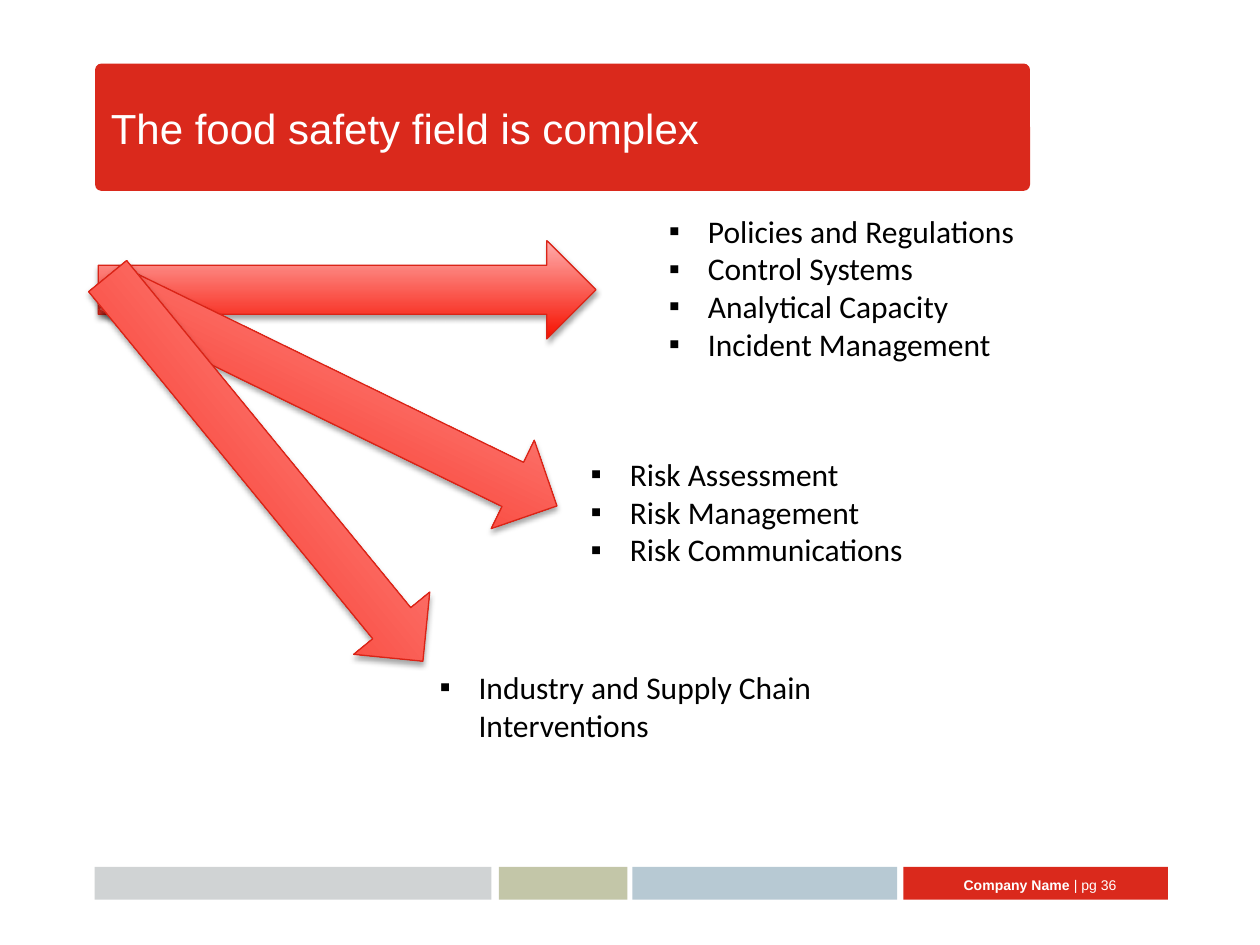
from pptx import Presentation
from pptx.dml.color import RGBColor
from pptx.enum.shapes import MSO_SHAPE
from pptx.enum.text import MSO_ANCHOR, MSO_AUTO_SIZE, PP_ALIGN
from pptx.oxml import parse_xml
from pptx.oxml.ns import nsdecls
from pptx.util import Inches, Pt

RED = "DA291C"
WHITE = "FFFFFF"
ARROW_LINE = "DA2417"
ARROW_STOPS = ("F61100", "FFADAC")
ARROW_SIZE = (3.95, 0.78)
FOOTER_BARS = [(0, 3.15, "D0D3D4"), (3.21, 1.02, "C3C6A8"),
               (4.27, 2.1, "B7C9D3"), (6.42, 2.1, RED)]
BRANCHES = [
    ((0.78, 1.91), 0, (5.21, 1.63, 3.92, 1.31),
     ["Policies and Regulations", "Control Systems",
      "Analytical Capacity", "Incident Management"]),
    ((0.67, 2.76), 26, (4.59, 3.56, 2.8, 1.01),
     ["Risk Assessment", "Risk Management", "Risk Communications"]),
    ((0.13, 3.33), 50.7, (3.39, 5.25, 3.92, 0.71),
     ["Industry and Supply Chain Interventions"]),
]


def colour(value):
    return RGBColor.from_string(value)


def inches(box):
    return [Inches(length) for length in box]


def style_font(font, name, size, value, bold=False):
    font.name = name
    font.size = Pt(size)
    font.bold = bold
    font.color.rgb = colour(value)


def add_bar(page, box, value, rounding=0):
    bar = page.shapes.add_shape(MSO_SHAPE.ROUNDED_RECTANGLE, *inches(box))
    bar.adjustments[0] = rounding
    bar.shadow.inherit = False
    bar.fill.solid()
    bar.fill.fore_color.rgb = colour(value)
    bar.line.fill.background()
    return bar


def add_title(page, box, text):
    left, top, width, height = box
    bar = add_bar(page, box, RED, 0.045)
    bar.line.color.rgb = colour(RED)
    bar.line.width = Pt(0.75)
    title = page.shapes.title
    title._element.addprevious(bar._element)
    title.left, title.top, title.width, title.height = inches(
        (left + 0.02, top, width - 0.03, height + 0.01))
    frame = title.text_frame
    frame.text = text
    frame.vertical_anchor = MSO_ANCHOR.MIDDLE
    para = frame.paragraphs[0]
    para.alignment = PP_ALIGN.LEFT
    style_font(para.runs[0].font, "Arial", 24, WHITE)


def add_footer(page, box):
    left, top, width, height = box
    for offset, bar_width, value in FOOTER_BARS:
        add_bar(page, (left + offset, top, bar_width, height), value)
    label = page.shapes.add_textbox(
        *inches((left + 5.88, top - 0.06, 2.33, height + 0.14)))
    frame = label.text_frame
    frame.word_wrap = True
    frame.vertical_anchor = MSO_ANCHOR.MIDDLE
    para = frame.paragraphs[0]
    para.alignment = PP_ALIGN.RIGHT
    for text, bold in (("Company Name ", True), ("| pg 36", False)):
        span = para.add_run()
        span.text = text
        style_font(span.font, "Arial", 8, WHITE, bold)


def add_arrow(page, box, rotation):
    arrow = page.shapes.add_shape(MSO_SHAPE.RIGHT_ARROW, *inches(box))
    arrow.rotation = rotation
    arrow.fill.gradient()
    arrow.fill.gradient_angle = 90
    for stop, value in zip(arrow.fill.gradient_stops, ARROW_STOPS):
        stop.color.rgb = colour(value)
    arrow.line.color.rgb = colour(ARROW_LINE)
    arrow.line.width = Pt(0.75)
    arrow._element.spPr.append(parse_xml(
        f'<a:effectLst {nsdecls("a")}>'
        f'<a:outerShdw blurRad="{Pt(3.1)}" dist="{Pt(1.8)}" dir="5400000" rotWithShape="0">'
        '<a:srgbClr val="000000"><a:alpha val="35000"/></a:srgbClr>'
        '</a:outerShdw></a:effectLst>'))


def add_list(page, box, items):
    frame = page.shapes.add_textbox(*inches(box)).text_frame
    frame.word_wrap = True
    frame.auto_size = MSO_AUTO_SIZE.SHAPE_TO_FIT_TEXT
    frame.text = "\n".join(items)
    for para in frame.paragraphs:
        properties = para._p.get_or_add_pPr()
        properties.set("marL", str(Inches(0.31)))
        properties.set("indent", str(Inches(-0.31)))
        properties.append(parse_xml(f'<a:buFont {nsdecls("a")} typeface="Arial"/>'))
        properties.append(parse_xml(f'<a:buChar {nsdecls("a")} char="▪"/>'))
        style_font(para.runs[0].font, "Calibri", 18, "000000")


def main():
    deck = Presentation()
    deck.slide_width, deck.slide_height = Inches(10), Inches(7.5)
    page = deck.slides.add_slide(deck.slide_layouts[5])
    add_title(page, (0.76, 0.51, 7.41, 1), "The food safety field is complex")
    add_footer(page, (0.75, 6.88, 8.52, 0.26))
    for position, rotation, list_box, items in BRANCHES:
        add_arrow(page, position + ARROW_SIZE, rotation)
        add_list(page, list_box, items)
    deck.save("out.pptx")


if __name__ == "__main__":
    main()
